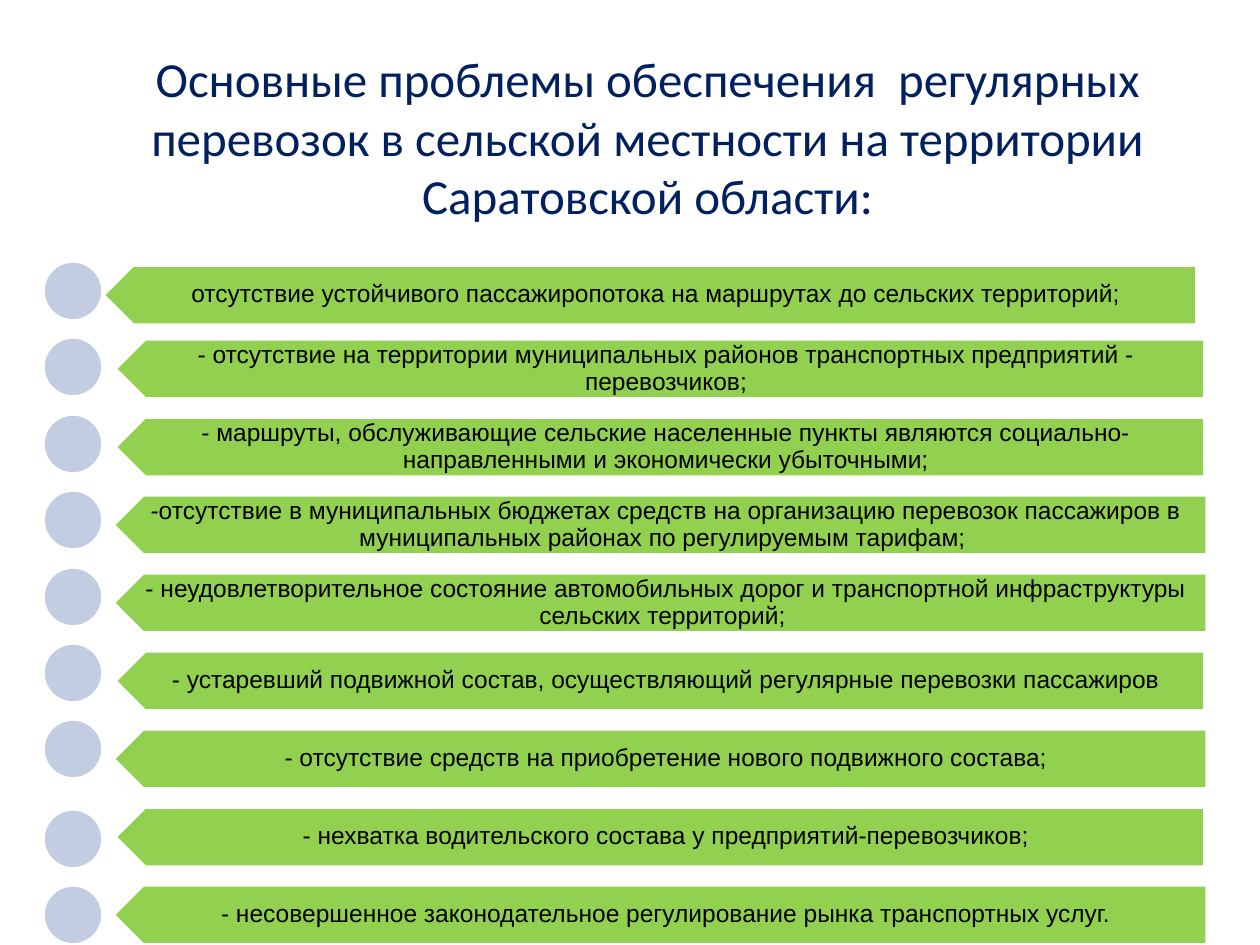
from pptx import Presentation
from pptx import util as u
from pptx.dml.color import RGBColor
from pptx.enum import shapes, text

PX = 914400 / 126
COLORS = {"title": "002060", "bar": "92D050", "dot": "C2CDE1", "edge": "FFFFFF", "text": "000000"}
TITLE = "Основные проблемы обеспечения  регулярных перевозок в сельской местности на территории Саратовской области:"

FIRST, NARROW, WIDE = (103, 1094), (115, 1090), (113, 1094)  # left, width
PROBLEMS = [
    (FIRST, "отсутствие устойчивого пассажиропотока на маршрутах до сельских территорий;"),
    (NARROW, "- отсутствие на территории муниципальных районов транспортных предприятий - перевозчиков;"),
    (NARROW, "- маршруты, обслуживающие сельские населенные пункты являются социально-направленными и экономически убыточными;"),
    (WIDE, "-отсутствие в муниципальных бюджетах средств на организацию перевозок пассажиров в муниципальных районах по регулируемым тарифам; "),
    (WIDE, "- неудовлетворительное состояние автомобильных дорог и транспортной инфраструктуры сельских территорий; "),
    (NARROW, "- устаревший подвижной состав, осуществляющий регулярные перевозки пассажиров"),
    (WIDE, "- отсутствие средств на приобретение нового подвижного состава;"),
    (NARROW, "- нехватка водительского состава у предприятий-перевозчиков;"),
    (WIDE, "- несовершенное законодательное регулирование рынка транспортных услуг."),
]
ROW_H = 60
FIRST_BAR_Y, SECOND_BAR_Y, BAR_STEP = 265, 339, 78
DOT_X, DOT_Y, DOT_STEP = 43, 261, 76.4
LOWER_DOTS, LOWER_SHIFT = 7, 13  # the last dots sit a little lower


def emu(*lengths):
    return [u.Emu(round(n * PX)) for n in lengths]


def add_plain_shape(s, kind, box, color):
    sp = s.shapes.add_shape(kind, *emu(*box))
    sp.shadow.inherit = False
    sp.fill.solid()
    sp.fill.fore_color.rgb = RGBColor.from_string(COLORS[color])
    sp.line.color.rgb = RGBColor.from_string(COLORS["edge"])
    sp.line.width = u.Pt(2)
    return sp


def set_text(sp, words, font, size, color, insets):
    """Write one centred paragraph; insets run left, top, right, bottom."""
    tf = sp.text_frame
    tf.word_wrap = True
    tf.auto_size = text.MSO_AUTO_SIZE.NONE
    tf.vertical_anchor = text.MSO_ANCHOR.MIDDLE
    tf.margin_left, tf.margin_top, tf.margin_right, tf.margin_bottom = emu(*insets)
    p = tf.paragraphs[0]
    p.alignment = text.PP_ALIGN.CENTER
    r = p.add_run()
    r.text = words
    r.font.name = font
    r.font.size = u.Pt(size)
    r.font.color.rgb = RGBColor.from_string(COLORS[color])
    return p


def add_problem(s, i, span, words):
    left, width = span
    top = SECOND_BAR_Y + BAR_STEP * (i - 1) if i else FIRST_BAR_Y
    box = (left, top, width, ROW_H)
    bar = add_plain_shape(s, shapes.MSO_SHAPE.PENTAGON, box, "bar")
    bar.rotation = 180
    label = s.shapes.add_textbox(*emu(*box))
    p = set_text(label, words, "Arial", 14, "text", (26, 8, 14, 8))
    p.line_spacing = 0.9
    dot_y = round(DOT_Y + DOT_STEP * i) + (LOWER_SHIFT if i >= LOWER_DOTS else 0)
    add_plain_shape(s, shapes.MSO_SHAPE.OVAL, (DOT_X, dot_y, ROW_H, ROW_H), "dot")


def main():
    prs = Presentation()
    prs.slide_width, prs.slide_height = emu(1260, 945)
    s = prs.slides.add_slide(prs.slide_layouts[5])
    title = s.shapes.title
    title.left, title.top, title.width, title.height = emu(74, 0, 1134, 273)
    set_text(title, TITLE, "Calibri", 28, "title", (13, 6, 0, 6))
    for i, (span, words) in enumerate(PROBLEMS):
        add_problem(s, i, span, words)
    prs.save("out.pptx")


if __name__ == "__main__":
    main()
